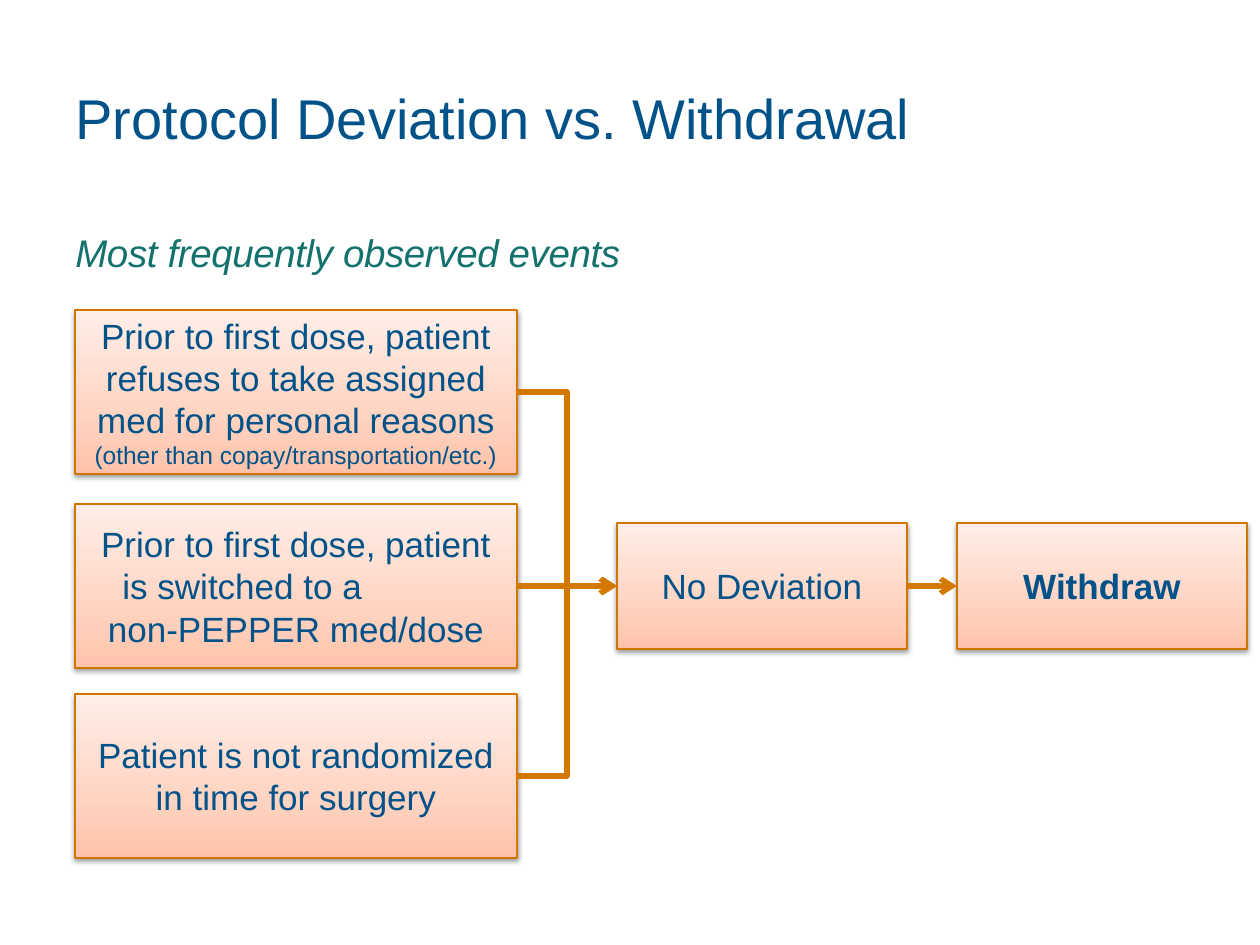
from lxml.etree import SubElement
from pptx import Presentation
from pptx.dml.color import RGBColor
from pptx.enum.shapes import MSO_CONNECTOR, MSO_SHAPE
from pptx.enum.text import MSO_ANCHOR, MSO_AUTO_SIZE, PP_ALIGN
from pptx.oxml import parse_xml
from pptx.oxml.ns import nsdecls, qn
from pptx.util import Emu, Pt

TITLE = "Protocol Deviation vs. Withdrawal"
SUBTITLE = "Most frequently observed events"
BLUE, GREEN, ORANGE, BORDER = "005288", "14726C", "D57800", "D07500"
GRADIENT = [(0, "FFC2A9"), (35, "FFD4C2"), (100, "FFEEE8")]

# Each box holds paragraphs of (left indent or None for centred, runs of (text, size, bold)).
EVENTS = [
    (310, [(None, [("Prior to first dose, patient refuses to take assigned med for personal reasons ", 20, False),
                   ("(other than copay/transportation/etc.)", 14, False)])]),
    (504, [(None, [("Prior to first dose, patient", 20, False)]),
           (35, [("is switched to a", 20, False)]),
           (None, [("non-PEPPER med/dose", 20, False)])]),
    (694, [(None, [("Patient is not randomized in time for surgery", 20, False)])]),
]
OUTCOMES = [
    (617, [(None, [("No Deviation", 20, False)])]),
    (957, [(None, [("Withdraw", 20, True)])]),
]
EVENT_LEFT, EVENT_WIDTH, EVENT_HEIGHT = 75, 442, 164
OUTCOME_TOP, OUTCOME_WIDTH, OUTCOME_HEIGHT = 523, 290, 126


def px(value):
    return Emu(round(value * 914400 / 126))


def color(value):
    return RGBColor.from_string(value)


def add_span(para, text, size, fill, bold=False, italic=False):
    span = para.add_run()
    span.text = text
    font = span.font
    font.name, font.size, font.bold, font.italic = "Arial", Pt(size), bold, italic
    font.color.rgb = color(fill)
    return span


def add_box(page, left, top, width, height, paragraphs):
    box = page.shapes.add_shape(MSO_SHAPE.RECTANGLE, px(left), px(top), px(width), px(height))
    box.line.color.rgb = color(BORDER)
    box.line.width = Pt(0.75)
    stops = "".join(f'<a:gs pos="{position * 1000}"><a:srgbClr val="{value}"/></a:gs>'
                    for position, value in GRADIENT)
    properties = box._element.spPr
    properties.find(qn("a:prstGeom")).addnext(parse_xml(
        f'<a:gradFill rotWithShape="1" {nsdecls("a")}><a:gsLst>{stops}</a:gsLst>'
        '<a:lin ang="16200000" scaled="0"/></a:gradFill>'))
    properties.append(parse_xml(
        f'<a:effectLst {nsdecls("a")}><a:outerShdw blurRad="40000" dist="20000" dir="5400000" '
        'rotWithShape="0"><a:srgbClr val="000000"><a:alpha val="38000"/></a:srgbClr>'
        '</a:outerShdw></a:effectLst>'))
    frame = box.text_frame
    frame.word_wrap = True
    frame.vertical_anchor = MSO_ANCHOR.MIDDLE
    for index, (indent, runs) in enumerate(paragraphs):
        para = frame.add_paragraph() if index else frame.paragraphs[0]
        para.alignment = PP_ALIGN.CENTER if indent is None else PP_ALIGN.LEFT
        if indent is not None:
            para._p.get_or_add_pPr().set("marL", str(px(indent)))
        for text, size, bold in runs:
            add_span(para, text, size, BLUE, bold)
    return box


def add_arrow(page, kind, source, target):
    arrow = page.shapes.add_connector(kind, 0, 0, 0, 0)
    arrow.begin_connect(source, 3)
    arrow.end_connect(target, 1)
    arrow.line.color.rgb = color(ORANGE)
    arrow.line.width = Pt(3)
    SubElement(arrow.line._get_or_add_ln(), qn("a:tailEnd"), type="arrow")
    SubElement(arrow._element.spPr, qn("a:effectLst"))


def main():
    deck = Presentation()
    deck.slide_width, deck.slide_height = px(1260), px(945)
    page = deck.slides.add_slide(deck.slide_layouts[5])

    title = page.shapes.title
    title.left, title.top, title.width, title.height = px(63), px(38), px(1134), px(158)
    frame = title.text_frame
    frame.auto_size = MSO_AUTO_SIZE.NONE
    frame.vertical_anchor = MSO_ANCHOR.MIDDLE
    frame.paragraphs[0].alignment = PP_ALIGN.LEFT
    add_span(frame.paragraphs[0], TITLE, 32, BLUE)

    subtitle = page.shapes.add_textbox(px(63), px(223), px(1134), px(625))
    subtitle.text_frame.word_wrap = True
    span = add_span(subtitle.text_frame.paragraphs[0], SUBTITLE, 22, GREEN, italic=True)
    span._r.get_or_add_rPr().set("spc", "-20")

    events = [add_box(page, EVENT_LEFT, top, EVENT_WIDTH, EVENT_HEIGHT, paragraphs)
              for top, paragraphs in EVENTS]
    deviation, withdraw = [
        add_box(page, left, OUTCOME_TOP, OUTCOME_WIDTH, OUTCOME_HEIGHT, paragraphs)
        for left, paragraphs in OUTCOMES]

    first, middle, last = events
    add_arrow(page, MSO_CONNECTOR.STRAIGHT, middle, deviation)
    add_arrow(page, MSO_CONNECTOR.STRAIGHT, deviation, withdraw)
    add_arrow(page, MSO_CONNECTOR.ELBOW, last, deviation)
    add_arrow(page, MSO_CONNECTOR.ELBOW, first, deviation)

    deck.save("out.pptx")


if __name__ == "__main__":
    main()
